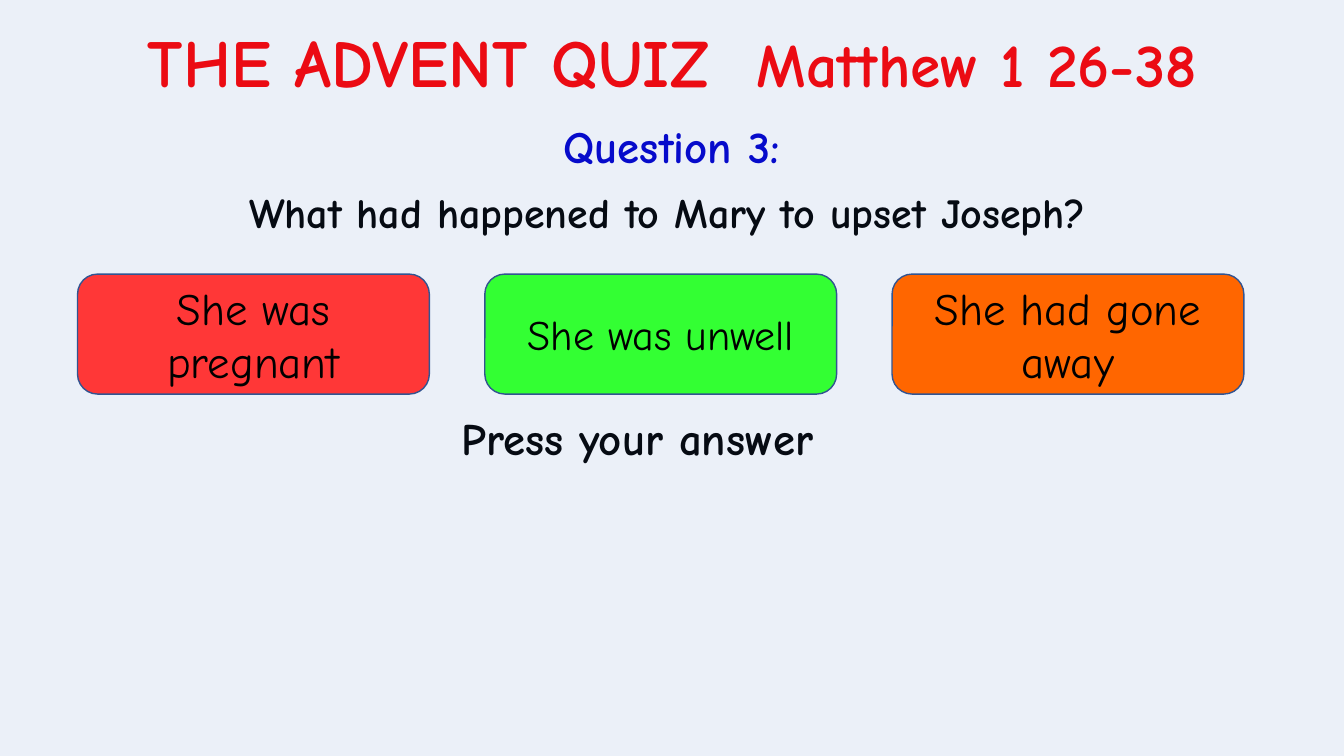
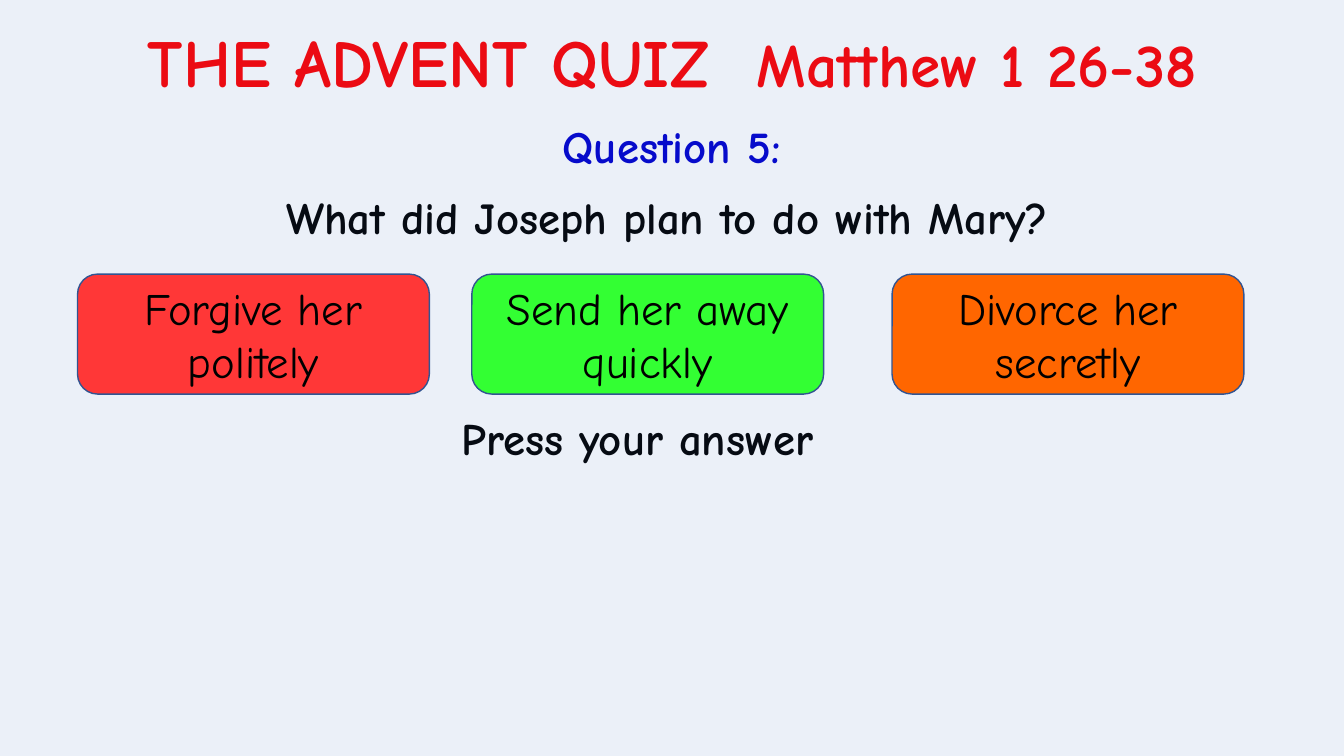
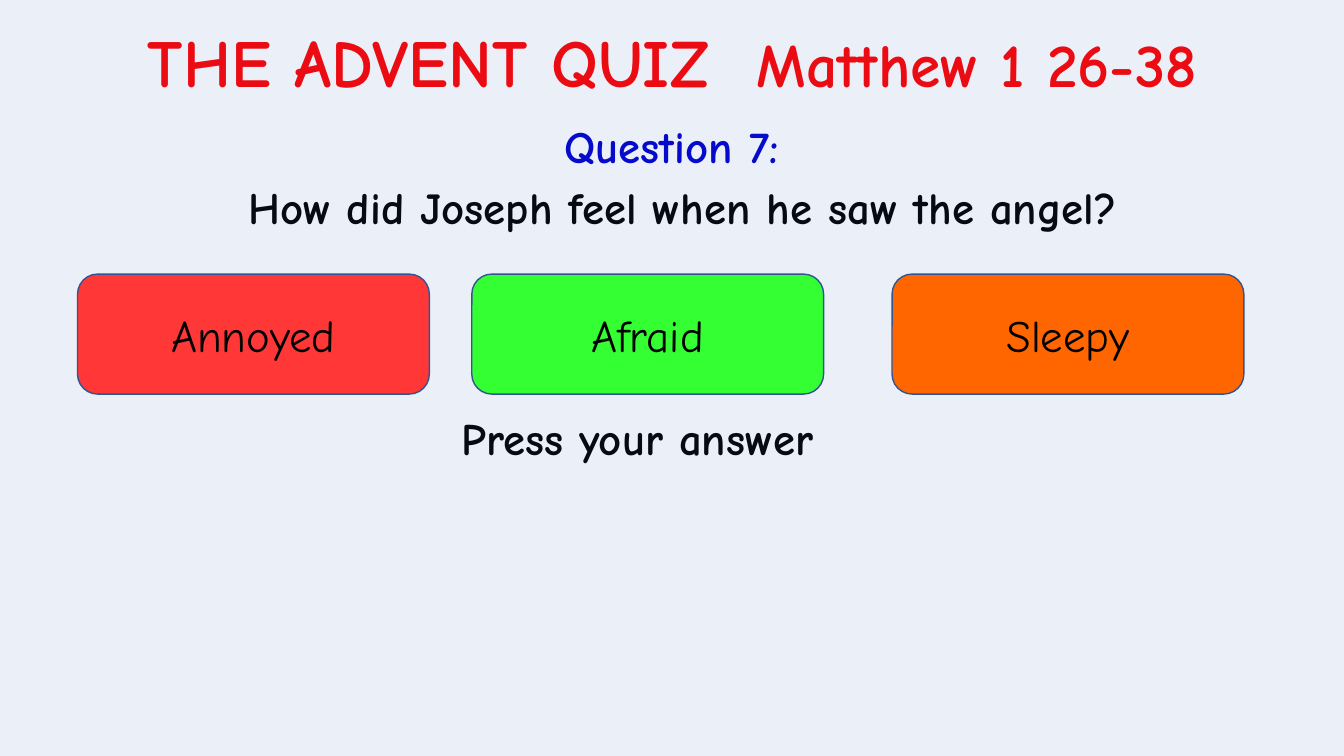
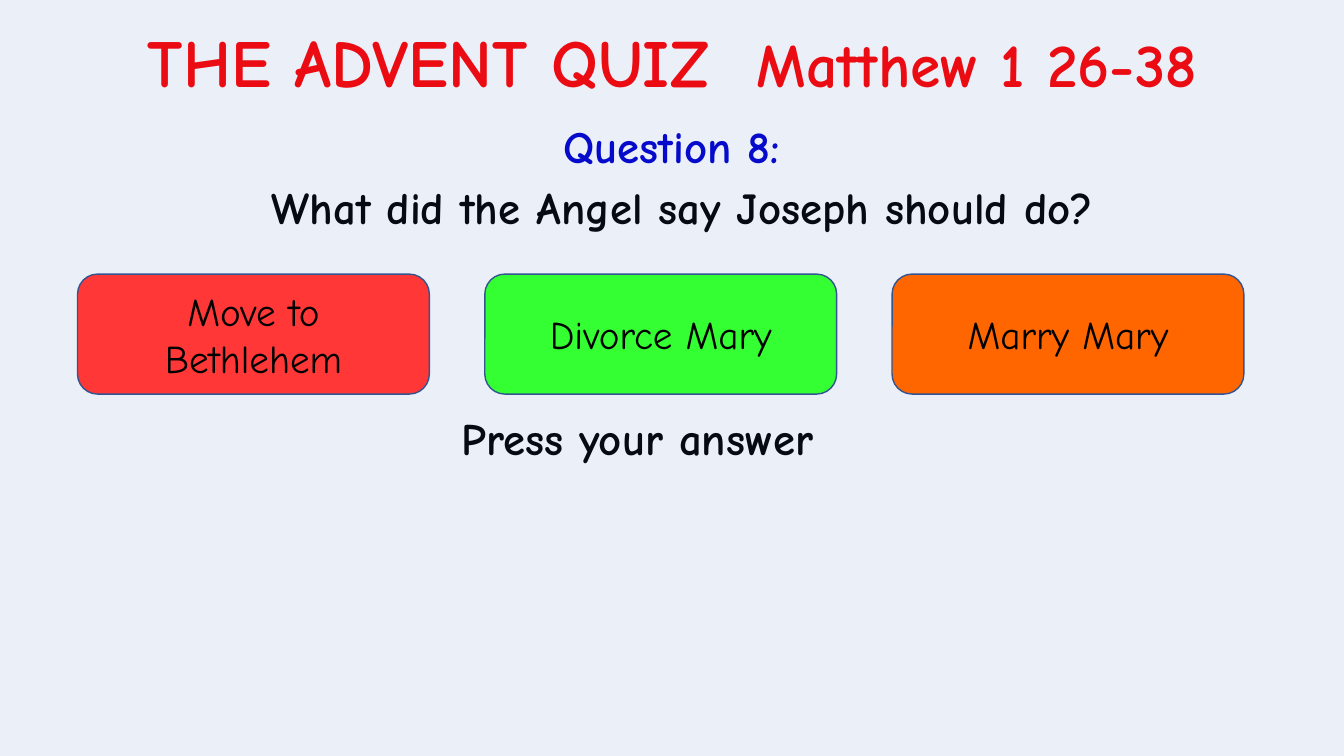
from pptx import Presentation
from pptx.dml.color import RGBColor
from pptx.enum.shapes import MSO_SHAPE
from pptx.enum.text import MSO_ANCHOR, MSO_AUTO_SIZE, PP_ALIGN
from pptx.oxml.ns import qn
from pptx.util import Pt
from lxml.etree import SubElement

# Colours and font
RED = RGBColor(0xFF, 0x00, 0x00)
BLUE = RGBColor(0x00, 0x00, 0xCC)
BLACK = RGBColor(0x00, 0x00, 0x00)
VEIL = RGBColor(0x44, 0x72, 0xC4)
EDGE = RGBColor(0x32, 0x54, 0x91)
FILLS = (
    RGBColor(0xFF, 0x37, 0x37),
    RGBColor(0x33, 0xFF, 0x33),
    RGBColor(0xFF, 0x66, 0x00),
)
FONT = "Comic Neue"

# Text formats
CENTRE = {"alignment": PP_ALIGN.CENTER}
PRESS = {"alignment": PP_ALIGN.LEFT, "line_spacing": 0.9, "space_before": Pt(7.5)}

# Answer row: left edge, top, width, height, and step from one to the next
LEFT, TOP, WIDE, HIGH, STEP = 55.4, 195.8, 251.3, 85.7, 290.9

# One entry a slide; "nudge" moves the middle answer, "veil" is the tint's left edge
QUIZ = (
    {"num": 3, "ask": "What had happened to Mary to upset Joseph?",
     "at": (60.5, 135.4), "size": 30, "lead": 30, "nudge": 0, "veil": -38.9,
     "picks": (("She was pregnant", 32), ("She was unwell", 30),
               ("She had gone away", 32))},
    {"num": 5, "ask": "What did Joseph plan to do with Mary?",
     "at": (60.5, 140.4), "size": 32, "lead": 30, "nudge": -9.3, "veil": -61.3,
     "picks": (("Forgive her politely", 32), ("Send her away quickly", 32),
               ("Divorce her secretly", 32))},
    {"num": 7, "ask": "How did Joseph feel when he saw the angel?",
     "at": (71.3, 127.4), "size": 32, "lead": 36, "nudge": -9.3, "veil": -33.9,
     "picks": (("Annoyed", 32), ("Afraid", 32), ("Sleepy", 32))},
    {"num": 8, "ask": "What did the Angel say Joseph should do?",
     "at": (71.3, 127.4), "size": 32, "lead": 36, "nudge": 0, "veil": -33.9,
     "picks": (("Move to Bethlehem", 28), ("Divorce Mary", 28),
               ("Marry Mary", 28))},
)


def apply(item, look):
    """Set every attribute named in look."""
    for name, value in look.items():
        setattr(item, name, value)


def write(para, text, size, color=BLACK, bold=True):
    run = para.add_run()
    run.text = text
    apply(run.font, {"name": FONT, "size": Pt(size), "bold": bold})
    run.font.color.rgb = color


def add_title(slide):
    title = slide.shapes.title
    apply(title, {"left": Pt(14), "top": Pt(10.8), "width": Pt(933), "height": Pt(65.5)})
    frame = title.text_frame
    apply(frame, {"word_wrap": False, "auto_size": MSO_AUTO_SIZE.NONE,
                  "vertical_anchor": MSO_ANCHOR.TOP})
    para = frame.paragraphs[0]
    apply(para, CENTRE)
    write(para, "THE ADVENT QUIZ  ", 48, RED)
    write(para, "Matthew 1 26-38", 44, RED)


def add_text(slide, box, text, size, look, color=BLACK):
    frame = slide.shapes.add_textbox(*map(Pt, box)).text_frame
    frame.word_wrap = True
    para = frame.paragraphs[0]
    apply(para, look)
    write(para, text, size, color)


def add_panel(slide, kind, box, fill):
    panel = slide.shapes.add_shape(kind, *map(Pt, box))
    panel.shadow.inherit = False
    panel.fill.solid()
    panel.fill.fore_color.rgb = fill
    panel.line.color.rgb = EDGE
    panel.line.width = Pt(1)
    return panel


def add_veil(slide, left):
    """Tint the whole slide with a tenth of blue."""
    veil = add_panel(slide, MSO_SHAPE.RECTANGLE, (left, -32.4, 1021.7, 628.6), VEIL)
    color = veil.fill._xPr.find(qn("a:solidFill"))[0]
    SubElement(color, qn("a:alpha")).set("val", "10000")


def add_picks(slide, picks, nudge):
    for col, ((text, size), fill) in enumerate(zip(picks, FILLS)):
        left = LEFT + col * STEP + (nudge if col == 1 else 0)
        box = (left, TOP, WIDE, HIGH)
        frame = add_panel(slide, MSO_SHAPE.ROUNDED_RECTANGLE, box, fill).text_frame
        apply(frame, {"word_wrap": True, "vertical_anchor": MSO_ANCHOR.MIDDLE})
        para = frame.paragraphs[0]
        apply(para, CENTRE)
        write(para, text, size, bold=False)


def add_quiz(deck, quiz):
    slide = deck.slides.add_slide(deck.slide_layouts[5])
    add_title(slide)
    # Question and prompt
    look = {**CENTRE, "line_spacing": Pt(quiz["lead"]), "space_before": Pt(10)}
    add_text(slide, (*quiz["at"], 833, 52), quiz["ask"], quiz["size"], look)
    add_text(slide, (322.6, 294.5, 484.6, 52), "Press your answer", 32, PRESS)
    add_text(slide, (321, 81.4, 317.5, 46), f"Question {quiz['num']}:", 32, CENTRE, BLUE)
    # Tint, then the answers above it
    add_veil(slide, quiz["veil"])
    add_picks(slide, quiz["picks"], quiz["nudge"])


def main():
    deck = Presentation()
    apply(deck, {"slide_width": Pt(960), "slide_height": Pt(540)})
    for quiz in QUIZ:
        add_quiz(deck, quiz)
    deck.save("out.pptx")


if __name__ == "__main__":
    main()
